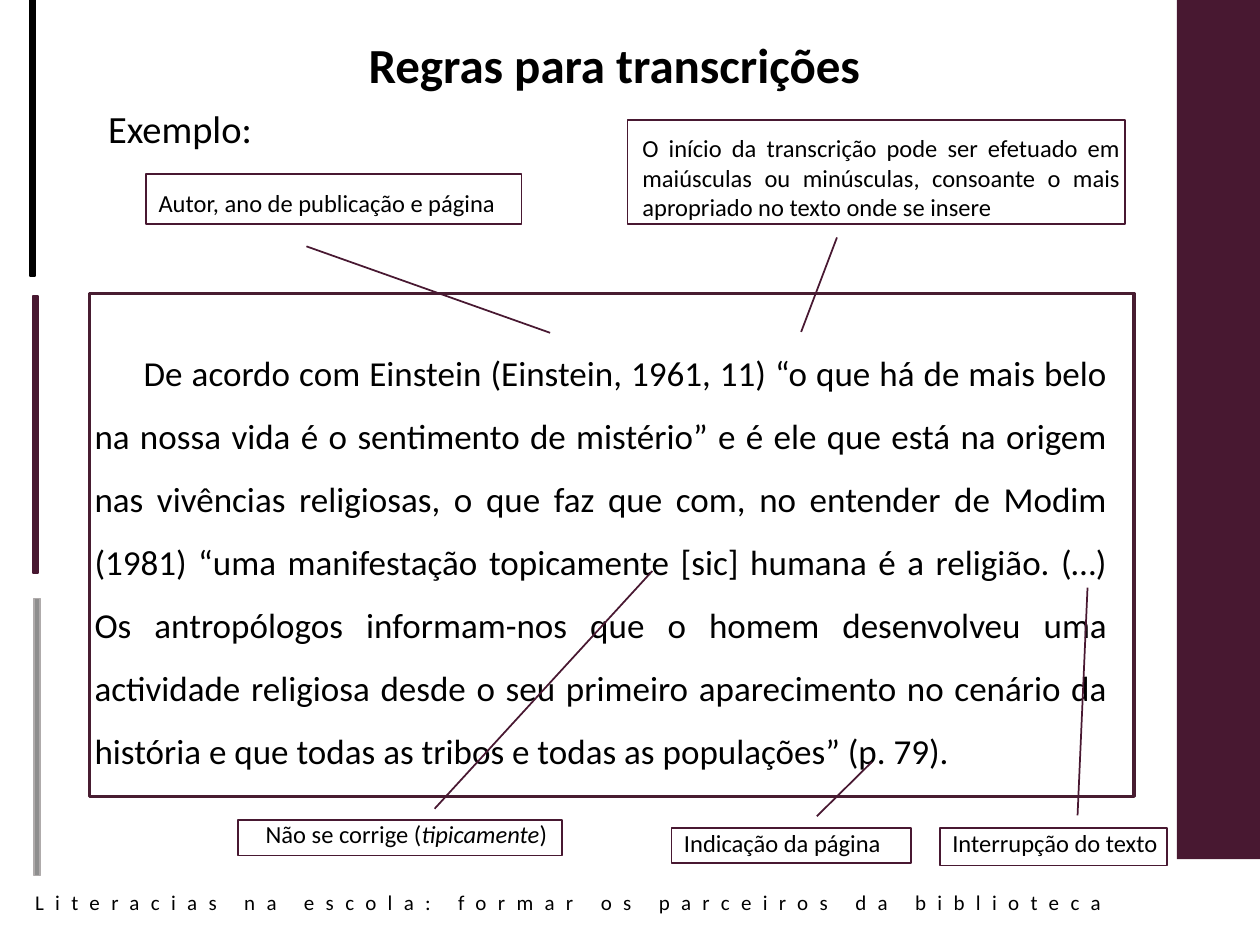
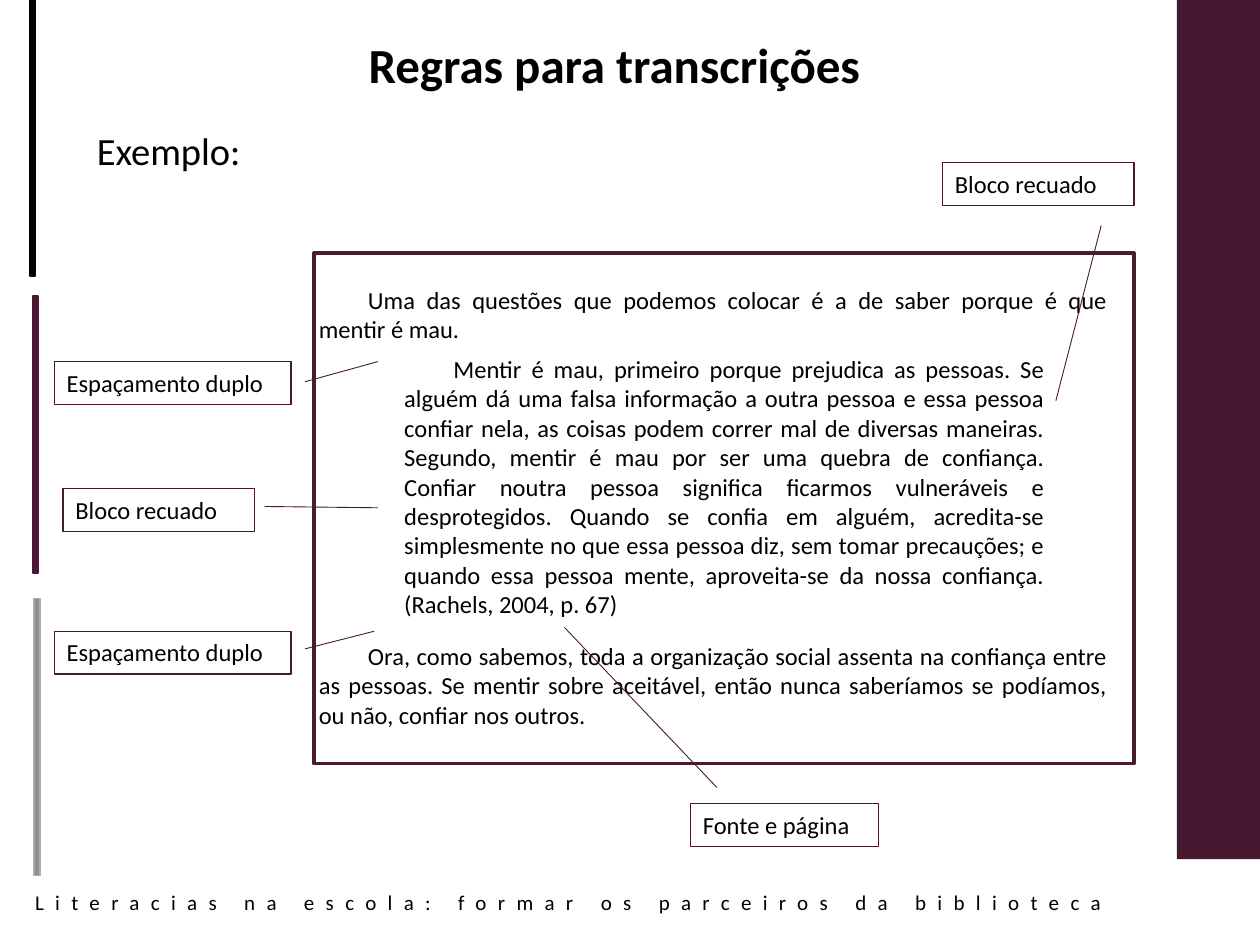
import pptx
import pptx.util
import pptx.dml.color
import pptx.enum.shapes
import pptx.enum.text
import lxml.etree

Inches = pptx.util.Inches
Pt = pptx.util.Pt
RGB = pptx.dml.color.RGBColor
SHAPE = pptx.enum.shapes.MSO_SHAPE
ALIGN = pptx.enum.text.PP_ALIGN

PLUM = RGB(0x48, 0x18, 0x31)
FRAME = RGB(0x48, 0x1D, 0x31)
BLACK = RGB(0, 0, 0)
GREY = RGB(0x8E, 0x8E, 0x8E)
EDGE = RGB(0xAF, 0xAB, 0xAB)
FONT = "Calibri"
INDENT = 0.39


def write(slide, place, words, size=14, align=ALIGN.JUSTIFY, space=None, indent=0):
    """Add a wrapped text box; each list in words is one paragraph of runs."""
    box = slide.shapes.add_textbox(*map(Inches, place))
    frame = box.text_frame
    frame.word_wrap = True
    for i, runs in enumerate(words):
        para = frame.paragraphs[0] if i == 0 else frame.add_paragraph()
        for run in runs:
            para.add_run().text = run
        para.alignment = align
        para.line_spacing = space
        if indent:
            para._p.get_or_add_pPr().set("indent", str(Inches(indent)))
        para.font.name = FONT
        para.font.size = Pt(size)
        para.font.color.rgb = BLACK
    return box


def block(slide, kind, place, fill=None, line=None):
    """Add a preset shape without shadow; no fill or line unless given."""
    item = slide.shapes.add_shape(kind, *map(Inches, place))
    item.shadow.inherit = False
    if fill is None:
        item.fill.background()
    else:
        item.fill.solid()
        item.fill.fore_color.rgb = fill
    if line is None:
        item.line.fill.background()
    else:
        item.line.color.rgb = line
        item.line.width = Pt(1)
    return item


deck = pptx.Presentation()
deck.slide_width = Inches(10)
deck.slide_height = Inches(7.5)

# Shared by both slides: heading, side bands, footer and the framed quote
pages = [
    ((0.57, 0.75), (0.71, 2.33, 8.29, 3.99), 0.29, 20, 1.5, [[
        "De acordo com Einstein (Einstein, 1961, 11) “o que há de mais belo na nossa "
        "vida é o sentimento de mistério” e é ele que está na origem nas vivências "
        "religiosas, o que faz que com, no entender de Modim (1981) “uma manifestação "
        "topicamente [sic] humana é a religião. (…) Os antropólogos informam-nos que o "
        "homem desenvolveu uma actividade religiosa desde o seu primeiro aparecimento "
        "no cenário da história e que todas as tribos e todas as populações” (p. 79)."]]),
    ((0.48, 0.92), (2.49, 2.01, 6.51, 4.05), 0.25, 14, None, [
        ["Uma das questões que podemos colocar é a de saber porque é que mentir é mau."],
        ["Ora, como sabemos, toda a organização social assenta na confiança entre as "
         "pessoas. Se mentir sobre aceitável, então nunca saberíamos se podíamos, ou "
         "não, confiar nos outros."]]),
]
bars = [
    ((0.24, -0.01, 0.04, 2.2), BLACK, BLACK),
    ((0.26, 2.35, 0.04, 2.2), PLUM, PLUM),
    ((0.27, 4.75, 0.05, 2.2), GREY, EDGE),
]
slides, quotes = [], []
for start, place, top, size, space, words in pages:
    slide = deck.slides.add_slide(deck.slide_layouts[6])
    write(slide, (start[0] + 0.19, start[1], 8.43, 0.52), [["Exemplo:"]], 22, space=1.1)
    title = write(slide, (0.48, -0.01, 8.79, 0.73), [["Regras para transcrições"]],
                  28, ALIGN.CENTER, 1.5)
    title.text_frame.paragraphs[0].font.bold = True
    block(slide, SHAPE.RECTANGLE, (9.34, -0.02, 0.66, 6.84), PLUM)
    for bar in bars:
        block(slide, SHAPE.RECTANGLE, *bar)
    foot = write(slide, (0.18, 7.01, 9.19, 0.3),
                 [["Literacias na escola: formar os parceiros da biblioteca"]],
                 12, ALIGN.LEFT)
    foot.text_frame.paragraphs[0].runs[0]._r.get_or_add_rPr().set("spc", "650")
    quote = write(slide, place, words, size, space=space, indent=INDENT)
    quote.line.color.rgb = FRAME
    quote.line.width = Pt(2)
    frame = quote.text_frame
    frame.margin_left = frame.margin_bottom = Inches(0.04)
    frame.margin_top = Inches(top)
    frame.margin_right = Inches(0.21)
    slides.append(slide)
    quotes.append(quote)
first, second = slides

# Slide 1: callouts, each with its note, frame and pointer (y1, x1, y2, x2)
calls = [
    (["Não se corrige (", "tipicamente", ")"], (2.01, 6.45, 2.62, 0.34),
     (1.89, 6.51, 2.57, 0.28), (-0.328, 0.607, -7.067, 1.279)),
    (["Interrupção do texto"], (7.46, 6.52, 2.01, 0.34),
     (7.46, 6.57, 1.8, 0.3), (-0.328, 0.607, -6.353, 0.651)),
    (["Indicação da página"], (5.33, 6.52, 2.01, 0.34),
     (5.33, 6.57, 1.9, 0.28), (-0.328, 0.607, -1.869, 0.837)),
    (["O início da transcrição pode ser efetuado em maiúsculas ou minúsculas, "
      "consoante o mais apropriado no texto onde se insere"], (5, 1.01, 3.99, 0.81),
     (4.98, 0.95, 3.95, 0.83), (1.127, 0.421, 2.03, 0.349)),
    (["Autor, ano de publicação e página"], (1.16, 1.44, 2.98, 0.34),
     (1.16, 1.38, 2.98, 0.4), (1.439, 0.427, 3.155, 1.076)),
]
for runs, spot, place, tip in calls:
    note = write(first, spot, [runs])
    if len(runs) > 1:
        note.text_frame.paragraphs[0].runs[1].font.italic = True
    call = block(first, SHAPE.LINE_CALLOUT_1, place, line=PLUM)
    for i, value in enumerate(tip):
        call.adjustments[i] = value

# Slide 2: indented quotation between the two paragraphs of the frame
quotes[1].text_frame.paragraphs[1].space_before = Pt(170)
write(second, (3.11, 2.76, 5.28, 2.22), [[
    "Mentir é mau, primeiro porque prejudica as pessoas. Se alguém dá uma falsa "
    "informação a outra pessoa e essa pessoa confiar nela, as coisas podem correr mal "
    "de diversas maneiras. Segundo, mentir é mau por ser uma quebra de confiança. "
    "Confiar noutra pessoa significa ficarmos vulneráveis e desprotegidos. Quando se "
    "confia em alguém, acredita-se simplesmente no que essa pessoa diz, sem tomar "
    "precauções; e quando essa pessoa mente, aproveita-se da nossa confiança. "
    "(Rachels, 2004, p. 67)"]], indent=INDENT)

# Slide 2: labels, each with the line that points into the text
labels = [
    ("Espaçamento duplo", (0.43, 2.87, 1.88), (2.42, 3.03, 3, 2.87)),
    ("Espaçamento duplo", (0.43, 5.01, 1.88), (2.42, 5.15, 2.97, 5.01)),
    ("Bloco recuado", (0.5, 3.88, 1.52), (3, 4.03, 2.1, 4.02)),
    ("Bloco recuado", (7.48, 1.29, 1.52), (8.74, 1.79, 8.38, 3.18)),
    ("Fonte e página", (5.48, 6.38, 1.49), (5.69, 6.25, 4.48, 4.98)),
]
for words, place, ends in labels:
    label = write(second, (*place, 0.34), [[words]])
    label.line.color.rgb = PLUM
    label.line.width = Pt(0.75)
    line = second.shapes.add_connector(
        pptx.enum.shapes.MSO_CONNECTOR.STRAIGHT, *map(Inches, ends))
    line.line.color.rgb = PLUM
    line.line.width = Pt(0.5)
    lxml.etree.SubElement(line._element.spPr, pptx.oxml.ns.qn("a:effectLst"))

deck.save("out.pptx")
